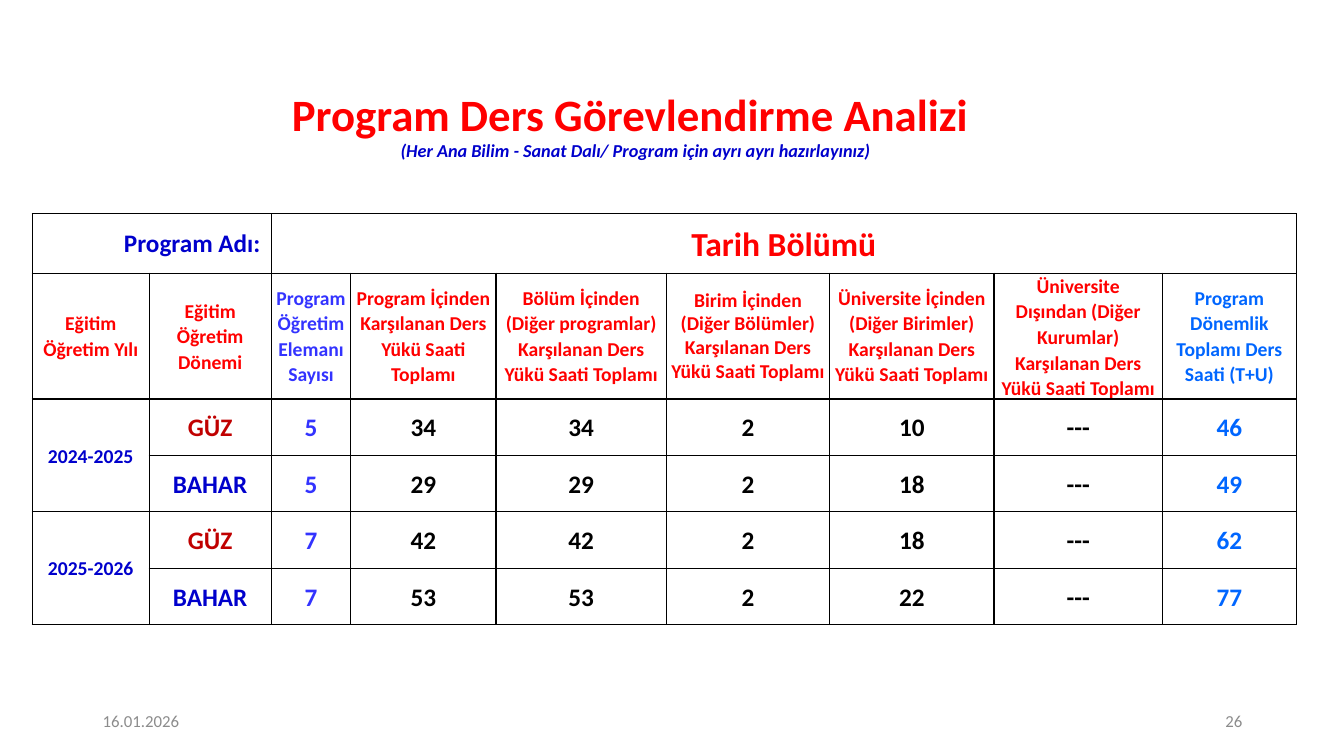
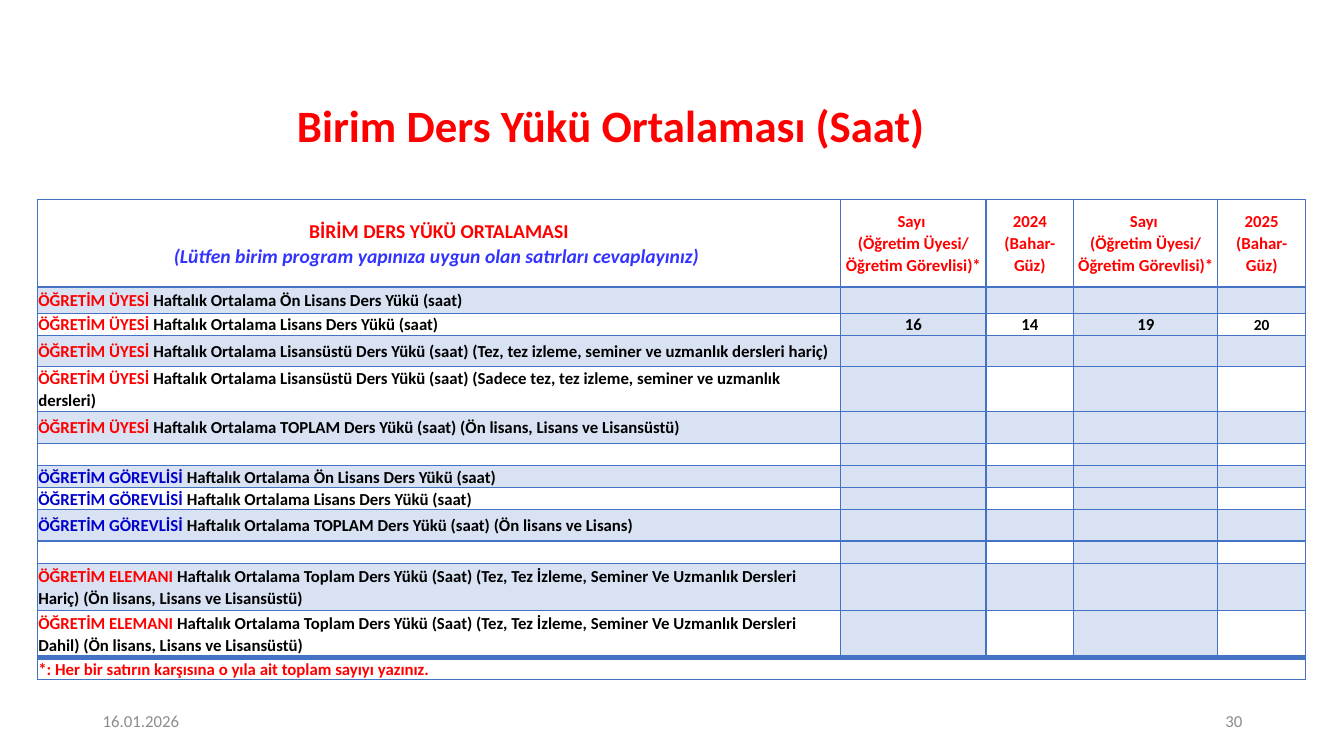
import pptx
import pptx.util
import pptx.dml.color
import pptx.enum.text
import pptx.oxml
import pptx.oxml.ns
import lxml.etree

Inches = pptx.util.Inches
Pt = pptx.util.Pt
RGBColor = pptx.dml.color.RGBColor
ALIGN = pptx.enum.text.PP_ALIGN
MIDDLE = pptx.enum.text.MSO_ANCHOR.MIDDLE
qn = pptx.oxml.ns.qn

FONT = "Calibri"
RED = RGBColor(0xFF, 0x00, 0x00)
DARK_RED = RGBColor(0xC0, 0x00, 0x00)
NAVY = RGBColor(0x00, 0x00, 0xCC)
VIOLET = RGBColor(0x33, 0x33, 0xFF)
SKY = RGBColor(0x00, 0x66, 0xFF)
BLACK = RGBColor(0x00, 0x00, 0x00)
GREY = RGBColor(0x8C, 0x8C, 0x8C)
BLUE = RGBColor(0x44, 0x72, 0xC4)
DATE = "16.01.2026"

ANALYSIS_COLS = [1.16, 1.21, 0.79, 1.44, 1.69, 1.62, 1.63, 1.67, 1.33]
ANALYSIS_ROWS = [0.59, 1.23] + [0.56] * 4
ANALYSIS_COLOURS = [RED, RED, VIOLET] + [RED] * 5 + [SKY]
ANALYSIS_HEADS = [
    "Eğitim Öğretim Yılı",
    "Eğitim Öğretim Dönemi",
    "Program Öğretim Elemanı Sayısı",
    "Program İçinden Karşılanan Ders Yükü Saati Toplamı",
    "Bölüm İçinden (Diğer programlar) Karşılanan Ders Yükü Saati Toplamı",
    "Birim İçinden (Diğer Bölümler) Karşılanan Ders Yükü Saati Toplamı",
    "Üniversite İçinden (Diğer Birimler) Karşılanan Ders Yükü Saati Toplamı",
    "Üniversite Dışından (Diğer Kurumlar) Karşılanan Ders Yükü Saati Toplamı",
    "Program Dönemlik Toplamı Ders Saati (T+U)",
]
YEARS = ["2024-2025", "2025-2026"]
TERMS = [("GÜZ", DARK_RED), ("BAHAR", NAVY)]
HOURS = [
    ["5", "34", "34", "2", "10", "---", "46"],
    ["5", "29", "29", "2", "18", "---", "49"],
    ["7", "42", "42", "2", "18", "---", "62"],
    ["7", "53", "53", "2", "22", "---", "77"],
]

LOAD_COLS = [7.97, 1.44, 0.87, 1.43, 0.87]
LOAD_ROWS = [0.87, 0.26, 0.22, 0.31, 0.44, 0.32, 0.22, 0.22, 0.22, 0.31, 0.22, 0.47, 0.47, 0.2]
MEMBER = ("ÖĞRETİM ÜYESİ ", RED)
LECTURER = ("ÖĞRETİM GÖREVLİSİ ", NAVY)
STAFF = ("ÖĞRETİM ELEMANI ", RED)
LOAD_LABELS = [
    (MEMBER, "Haftalık Ortalama Ön Lisans Ders Yükü (saat)"),
    (MEMBER, "Haftalık Ortalama Lisans Ders Yükü (saat)"),
    (MEMBER, "Haftalık Ortalama Lisansüstü Ders Yükü (saat) "
             "(Tez, tez izleme, seminer ve uzmanlık dersleri hariç)"),
    (MEMBER, "Haftalık Ortalama Lisansüstü Ders Yükü (saat) "
             "(Sadece tez, tez izleme, seminer ve uzmanlık dersleri)"),
    (MEMBER, "Haftalık Ortalama TOPLAM Ders Yükü (saat) (Ön lisans, Lisans ve Lisansüstü)"),
    None,
    (LECTURER, "Haftalık Ortalama Ön Lisans Ders Yükü (saat)"),
    (LECTURER, "Haftalık Ortalama Lisans Ders Yükü (saat)"),
    (LECTURER, "Haftalık Ortalama TOPLAM Ders Yükü (saat) (Ön lisans ve Lisans)"),
    None,
    (STAFF, "Haftalık Ortalama Toplam Ders Yükü (Saat) (Tez, Tez İzleme, Seminer Ve "
            "Uzmanlık Dersleri Hariç) (Ön lisans, Lisans ve Lisansüstü)"),
    (STAFF, "Haftalık Ortalama Toplam Ders Yükü (Saat) (Tez, Tez İzleme, Seminer Ve "
            "Uzmanlık Dersleri Dahil) (Ön lisans, Lisans ve Lisansüstü)"),
]
LOAD_VALUES = {2: ["16", "14", "19", "20"]}


def set_font(font, size, colour=None, bold=None, italic=None):
    font.name = FONT
    font.size = Pt(size)
    font.bold = bold
    font.italic = italic
    if colour is not None:
        font.color.rgb = colour


def write(p, runs, size, align=ALIGN.CENTER, spacing=1.07, bold=True, italic=None):
    p.alignment = align
    p.line_spacing = spacing
    set_font(p.font, size, runs[0][1] if len(runs) == 1 else None, bold, italic)
    for text, colour in runs:
        r = p.add_run()
        r.text = text
        if len(runs) > 1:
            r.font.color.rgb = colour


def fill_cell(cell, text, colour, size, **style):
    write(cell.text_frame.paragraphs[0], [(text, colour)], size, **style)


def empty_cell(cell, size):
    end = lxml.etree.SubElement(cell.text_frame.paragraphs[0]._p, qn("a:endParaRPr"))
    end.set("sz", str(size * 100))


def set_borders(cell, colour, left=1, right=1, top=1, bottom=1):
    tc_pr = cell._tc.get_or_add_tcPr()
    for side, width in zip("LRTB", (left, right, top, bottom)):
        ln = lxml.etree.SubElement(tc_pr, qn("a:ln" + side), w=str(Pt(width)))
        fill = lxml.etree.SubElement(ln, qn("a:solidFill"))
        lxml.etree.SubElement(fill, qn("a:srgbClr"), val=str(colour))


def tint(cell):
    cell.fill.solid()
    cell.fill.fore_color.rgb = BLUE
    colour = cell._tc.tcPr.find(".//" + qn("a:solidFill") + "[last()]/" + qn("a:srgbClr"))
    colour = cell._tc.tcPr.find(qn("a:solidFill")).find(qn("a:srgbClr"))
    lxml.etree.SubElement(colour, qn("a:alpha"), val="20000")


def add_grid(s, left, top, cols, rows, inset):
    frame = s.shapes.add_table(len(rows), len(cols), Inches(left), Inches(top),
                               Inches(sum(cols)), Inches(sum(rows)))
    table = frame.table
    table.first_row = False
    table.horz_banding = False
    for column, width in zip(table.columns, cols):
        column.width = Inches(width)
    for row, height in zip(table.rows, rows):
        row.height = Inches(height)
    for cell in table.iter_cells():
        cell.margin_left = cell.margin_right = Inches(inset)
        cell.margin_top = cell.margin_bottom = 0
        cell.vertical_anchor = MIDDLE
    return table


def add_footer(s, left, text, align):
    tf = s.shapes.add_textbox(Inches(left), Inches(6.95), Inches(3), Inches(0.4)).text_frame
    tf.word_wrap = True
    tf.vertical_anchor = MIDDLE
    write(tf.paragraphs[0], [(text, GREY)], 12, align, 1, bold=False)


def add_page(prs, title, box, number):
    s = prs.slides.add_slide(prs.slide_layouts[5])
    sp = s.shapes.title
    sp.left, sp.top, sp.width, sp.height = [Inches(v) for v in box]
    tf = sp.text_frame
    tf.auto_size = pptx.enum.text.MSO_AUTO_SIZE.NONE
    tf.word_wrap = True
    tf.vertical_anchor = MIDDLE
    write(tf.paragraphs[0], [(title, RED)], 32, spacing=0.9)
    add_footer(s, 0.92, DATE, ALIGN.LEFT)
    add_footer(s, 9.42, number, ALIGN.RIGHT)
    return s


def add_subtitle(s, text):
    p = s.shapes.title.text_frame.paragraphs[0]
    p.add_line_break()
    r = p.add_run()
    r.text = text
    set_font(r.font, 13, NAVY, True, True)


def add_analysis_table(s, left, top):
    table = add_grid(s, left, top, ANALYSIS_COLS, ANALYSIS_ROWS, 0.05)
    for cell in table.iter_cells():
        set_borders(cell, BLACK)
        cell.fill.background()
    table.cell(0, 0).merge(table.cell(0, 1))
    table.cell(0, 2).merge(table.cell(0, 8))
    fill_cell(table.cell(0, 0), "Program Adı: ", NAVY, 18, align=ALIGN.RIGHT, spacing=1)
    fill_cell(table.cell(0, 2), "Tarih Bölümü", RED, 24)
    for c, (head, colour) in enumerate(zip(ANALYSIS_HEADS, ANALYSIS_COLOURS)):
        fill_cell(table.cell(1, c), head, colour, 14, spacing=1 if c == 5 else 1.07)
    for i, year in enumerate(YEARS):
        first = 2 + 2 * i
        table.cell(first, 0).merge(table.cell(first + 1, 0))
        fill_cell(table.cell(first, 0), year, NAVY, 14)
    for i, hours in enumerate(HOURS):
        fill_cell(table.cell(2 + i, 1), *TERMS[i % 2], 18)
        colours = [VIOLET] + [BLACK] * 5 + [SKY]
        for c, (value, colour) in enumerate(zip(hours, colours), 2):
            fill_cell(table.cell(2 + i, c), value, colour, 18)


def add_load_header(table):
    tf = table.cell(0, 0).text_frame
    write(tf.paragraphs[0], [("BİRİM DERS YÜKÜ ORTALAMASI", RED)], 14)
    write(tf.add_paragraph(),
          [("(Lütfen birim program yapınıza uygun olan satırları cevaplayınız) ", VIOLET)],
          14, italic=True)
    for c, year in ((1, "2024"), (3, "2025")):
        tf = table.cell(0, c).text_frame
        write(tf.paragraphs[0], [("Sayı ", RED)], 12)
        write(tf.add_paragraph(), [("(Öğretim Üyesi/ Öğretim Görevlisi)*", RED)], 12)
        fill_cell(table.cell(0, c + 1), year + " (Bahar- Güz)", RED, 12)


def add_load_table(s, left, top):
    table = add_grid(s, left, top, LOAD_COLS, LOAD_ROWS, 0.01)
    last = len(LOAD_ROWS) - 1
    thick = {0: 2, last - 1: 4}
    for r in range(last + 1):
        for c in range(len(LOAD_COLS)):
            cell = table.cell(r, c)
            set_borders(cell, BLUE, top=thick.get(r - 1, 1), bottom=thick.get(r, 1))
            if 0 < r < last and (r % 2 or c % 2):
                tint(cell)
            else:
                cell.fill.background()
    add_load_header(table)
    for r, label in enumerate(LOAD_LABELS, 1):
        if label:
            prefix, text = label
            write(table.cell(r, 0).text_frame.paragraphs[0], [prefix, (text, BLACK)], 12,
                  ALIGN.LEFT)
        else:
            empty_cell(table.cell(r, 0), 11)
        for c in range(1, len(LOAD_COLS)):
            if r in LOAD_VALUES:
                fill_cell(table.cell(r, c), LOAD_VALUES[r][c - 1], BLACK, 11 if c == 4 else 12)
            else:
                empty_cell(table.cell(r, c), 11)
    for c in range(1, len(LOAD_COLS)):
        empty_cell(table.cell(last, c), 11)
    table.cell(last, 0).merge(table.cell(last, len(LOAD_COLS) - 1))
    fill_cell(table.cell(last, 0),
              "*: Her bir satırın karşısına o yıla ait toplam sayıyı yazınız.",
              RED, 12, align=ALIGN.LEFT)


def main():
    prs = pptx.Presentation()
    prs.slide_width = Inches(13.33)
    prs.slide_height = Inches(7.5)
    s = add_page(prs, "Program Ders Görevlendirme Analizi ", (0.73, 0.86, 11.14, 0.8), "26")
    add_subtitle(s, "(Her Ana Bilim - Sanat Dalı/ Program için ayrı ayrı hazırlayınız)")
    add_analysis_table(s, 0.32, 2.12)
    s = add_page(prs, "Birim Ders Yükü Ortalaması (Saat)", (0.32, 0.92, 11.48, 0.69), "30")
    add_load_table(s, 0.37, 1.98)
    prs.save("out.pptx")


if __name__ == "__main__":
    main()
